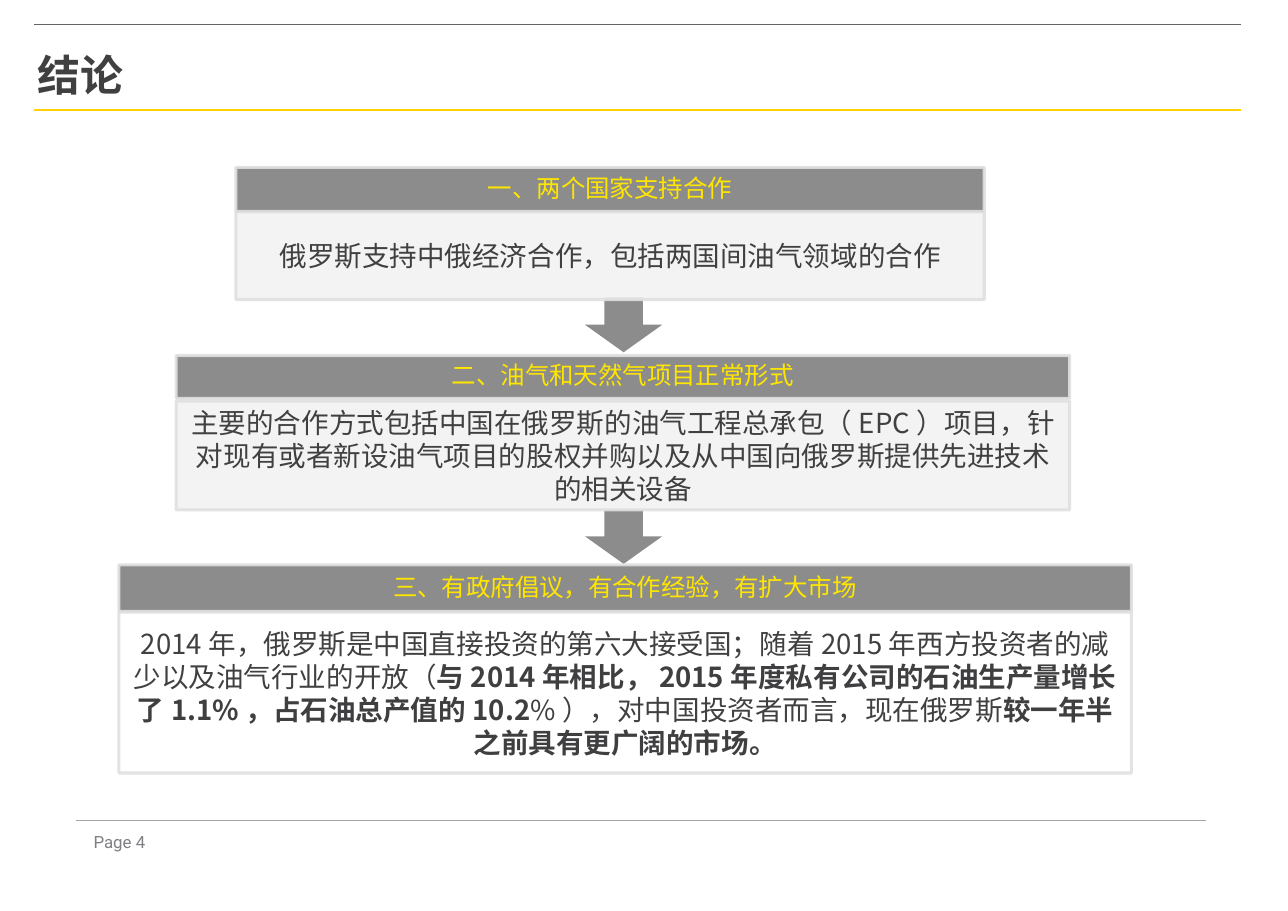
from lxml.etree import SubElement as Sub
from pptx import Presentation
from pptx.dml.color import RGBColor as RGB
from pptx.enum.shapes import MSO_CONNECTOR as LINK, MSO_SHAPE as SHAPE
from pptx.enum.text import MSO_ANCHOR as ANCHOR, MSO_AUTO_SIZE as FIT, PP_ALIGN as ALIGN
from pptx.oxml.ns import qn
from pptx.util import Cm, Pt

YELLOW = RGB(0xFF, 0xE6, 0x00)
GOLD = RGB(0xFF, 0xD2, 0x00)
GREY = RGB(0x80, 0x80, 0x80)
PALE = RGB(0xF2, 0xF2, 0xF2)
EDGE = RGB(0xE1, 0xE0, 0xE1)
DARK = RGB(0x40, 0x40, 0x40)
INK = RGB(0x3F, 0x3F, 0x41)
RULE = RGB(0x64, 0x64, 0x64)
FOOT = RGB(0xA5, 0xA4, 0xA7)
PAGE = RGB(0x7F, 0x7E, 0x82)

STEPS = [
    (5.44, 17.25, (3.86, 1.02), (4.88, 2.03), (0.36, 0.08), PALE,
     "一、两个国家支持合作",
     [("俄罗斯支持中俄经济合作，包括两国间油气领域的合作", DARK, False)]),
    (4.06, 20.6, (8.2, 0.99), (9.25, 2.51), (0.28, 0.05), PALE,
     "二、油气和天然气项目正常形式",
     [("主要的合作方式包括中国在俄罗斯的油气工程总承包（EPC）项目，"
       "针对现有或者新设油气项目的股权并购以及从中国向俄罗斯提供先进技术的相关设备", DARK, False)]),
    (2.74, 23.34, (13.03, 1.07), (14.12, 3.71), (0.28, 0.05), None,
     "三、有政府倡议，有合作经验，有扩大市场",
     [("2014年，俄罗斯是中国直接投资的第六大接受国；"
       "随着2015年西方投资者的减少以及油气行业的开放（", DARK, False),
      ("与2014年相比，2015年度私有公司的石油生产量增长了1.1%，占石油总产值的10.2", INK, True),
      ("%", INK, False),
      ("），对中国投资者而言，现在俄罗斯", DARK, False),
      ("较一年半之前具有更广阔的市场。", INK, True)]),
]


class Deck:
    """Holds the style and the current slide, and draws each kind of element."""

    font = "Noto Sans CJK SC"

    def __init__(self):
        self.prs = Presentation()
        self.prs.slide_width, self.prs.slide_height = Cm(29.69), Cm(21.01)
        self.slide = self.prs.slides.add_slide(self.prs.slide_layouts[5])
        self.shapes = self.slide.shapes

    def style(self, run, size, color, bold=False, font=None):
        face = run.font
        face.name, face.size, face.bold = font or self.font, Pt(size), bold
        face.color.rgb = color
        Sub(run._r.get_or_add_rPr(), qn("a:ea")).set("typeface", font or self.font)

    def frame(self, shape, side, top, anchor):
        text = shape.text_frame
        text.word_wrap, text.auto_size = True, FIT.NONE
        text.margin_left = text.margin_right = Cm(side)
        text.margin_top = text.margin_bottom = Cm(top)
        text.vertical_anchor = anchor
        return text

    def fade(self, fill):
        tint = fill._xPr.find(qn("a:solidFill"))[0]
        Sub(tint, qn("a:alpha")).set("val", "90000")

    def paint(self, shape, color):
        shape.shadow.inherit = False
        if color is None:
            shape.fill.background()
        else:
            shape.fill.solid()
            shape.fill.fore_color.rgb = color
            self.fade(shape.fill)

    def title(self, words):
        head = self.shapes.title
        head.left, head.top, head.width, head.height = Cm(0.86), Cm(1.02), Cm(27.99), Cm(2.46)
        text = self.frame(head, 0, 0, ANCHOR.TOP)
        text.margin_top = Cm(0.1)
        text.text = words
        para = text.paragraphs[0]
        para.alignment = ALIGN.LEFT
        self.style(para.runs[0], 28, DARK, True)

    def rule(self, left, right, top, color, width):
        line = self.shapes.add_connector(LINK.STRAIGHT, Cm(left), Cm(top), Cm(right), Cm(top))
        line.line.color.rgb, line.line.width = color, Pt(width)
        Sub(line._element.spPr, qn("a:effectLst"))

    def arrow(self, top):
        shape = self.shapes.add_shape(SHAPE.RIGHT_ARROW, Cm(13.74), Cm(top), Cm(1.27), Cm(1.78))
        shape.rotation = 90
        self.paint(shape, GREY)
        shape.line.fill.background()

    def box(self, left, width, span, pad, fill, size, parts, gap=1):
        top, height = span
        shape = self.shapes.add_shape(SHAPE.RECTANGLE, Cm(left), Cm(top), Cm(width), Cm(height))
        self.paint(shape, fill)
        shape.line.color.rgb, shape.line.width = EDGE, Pt(2)
        self.fade(shape.line.fill)
        para = self.frame(shape, *pad, ANCHOR.MIDDLE).paragraphs[0]
        para.alignment, para.line_spacing = ALIGN.CENTER, gap
        for words, color, bold in parts:
            run = para.add_run()
            run.text = words
            self.style(run, size, color, bold)

    def page(self, words):
        note = self.shapes.add_textbox(Cm(1.75), Cm(19.15), Cm(2.01), Cm(0.56))
        text = self.frame(note, 0, 0, ANCHOR.TOP)
        text.text = words
        para = text.paragraphs[0]
        para.alignment, para.line_spacing = ALIGN.CENTER, Pt(14)
        self.style(para.runs[0], 11, PAGE, font="Roboto")


def main():
    deck = Deck()
    deck.rule(0.79, 28.6, 2.54, GOLD, 1)
    deck.rule(0.79, 28.6, 0.56, RULE, 0.5)
    deck.rule(1.75, 27.79, 18.92, FOOT, 0.75)
    deck.page("Page 4")
    deck.title("结论")
    for top in (6.6, 11.48):
        deck.arrow(top)
    for left, width, head, body, pad, fill, name, parts in STEPS:
        deck.box(left, width, body, pad, fill, 18, parts)
        deck.box(left, width, head, pad, GREY, 16, [(name, YELLOW, False)], 0.9)
    deck.prs.save("out.pptx")


if __name__ == "__main__":
    main()
